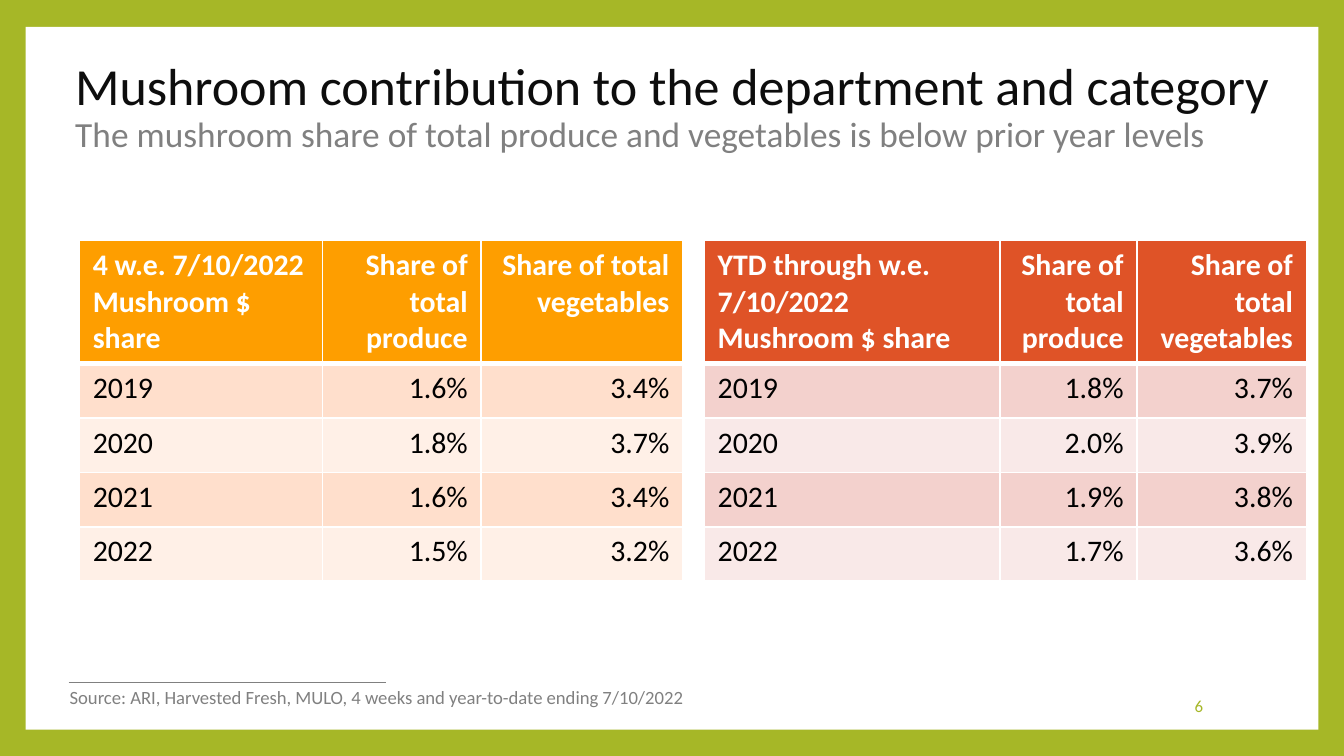
from lxml import etree
from pptx import Presentation
from pptx.dml.color import RGBColor
from pptx.enum.shapes import MSO_CONNECTOR, MSO_SHAPE
from pptx.enum.text import MSO_ANCHOR, MSO_AUTO_SIZE, PP_ALIGN
from pptx.oxml.ns import qn
from pptx.util import Inches, Pt

FONT = "Calibri"
COLORS = {
    "green": "A6B727", "white": "FFFFFF", "black": "000000",
    "title": "0D0D0D", "gray": "808080",
    "orange": "FE9E00", "orange_band": "FFDFCC", "orange_light": "FFF0E7",
    "red": "DF5327", "red_band": "F3D1CD", "red_light": "F9E9E8",
}
SLIDE_WIDTH = 10
SLIDE_HEIGHT = SLIDE_WIDTH * 9 / 16
HEADER_HEIGHT = 0.9
RECENT_WEEKS = [
    ["4 w.e. 7/10/2022\nMushroom $ share", "Share of total produce", "Share of total vegetables"],
    ["2019", "1.6%", "3.4%"],
    ["2020", "1.8%", "3.7%"],
    ["2021", "1.6%", "3.4%"],
    ["2022", "1.5%", "3.2%"],
]
YEAR_TO_DATE = [
    ["YTD through w.e. 7/10/2022\nMushroom $ share", "Share of total produce", "Share of total vegetables"],
    ["2019", "1.8%", "3.7%"],
    ["2020", "2.0%", "3.9%"],
    ["2021", "1.9%", "3.8%"],
    ["2022", "1.7%", "3.6%"],
]


def color(name):
    return RGBColor.from_string(COLORS[name])


def add_run(paragraph, text, size, color_name, bold=False):
    run = paragraph.add_run()
    run.text = text
    run.font.name = FONT
    run.font.size = Pt(size)
    run.font.bold = bold
    run.font.color.rgb = color(color_name)


def add_frame(slide, left, top, width, height):
    """Green slide background with a white panel behind everything else."""
    slide.background.fill.solid()
    slide.background.fill.fore_color.rgb = color("green")
    panel = slide.shapes.add_shape(
        MSO_SHAPE.RECTANGLE, Inches(left), Inches(top), Inches(width), Inches(height))
    panel.shadow.inherit = False
    panel.fill.solid()
    panel.fill.fore_color.rgb = color("white")
    panel.line.fill.background()
    slide.shapes.title._element.addprevious(panel._element)


def set_title(slide, left, top, width, height):
    title = slide.shapes.title
    title.left, title.top = Inches(left), Inches(top)
    title.width, title.height = Inches(width), Inches(height)
    frame = title.text_frame
    frame.auto_size = MSO_AUTO_SIZE.NONE
    frame.vertical_anchor = MSO_ANCHOR.MIDDLE
    paragraph = frame.paragraphs[0]
    paragraph.alignment = PP_ALIGN.LEFT
    paragraph.line_spacing = 0.9
    add_run(paragraph, "Mushroom contribution to the department and category", 27.9, "title")
    paragraph.add_line_break()
    add_run(paragraph,
            "The mushroom share of total produce and vegetables is below prior year levels",
            18.9, "gray")


def set_borders(cell, top, bottom):
    """White borders; the top and bottom widths are in points."""
    properties = cell._tc.get_or_add_tcPr()
    for tag, width in (("a:lnL", 1), ("a:lnR", 1), ("a:lnT", top), ("a:lnB", bottom)):
        line = etree.SubElement(properties, qn(tag), w=str(Pt(width)))
        fill = etree.SubElement(line, qn("a:solidFill"))
        etree.SubElement(fill, qn("a:srgbClr"), val=COLORS["white"])


def add_share_table(slide, left, top, height, column_widths, rows, palette):
    row_height = (height - HEADER_HEIGHT) / (len(rows) - 1)
    table = slide.shapes.add_table(
        len(rows), len(column_widths), Inches(left), Inches(top),
        Inches(sum(column_widths)), Inches(height)).table
    for column, width in zip(table.columns, column_widths):
        column.width = Inches(width)
    for row_index, values in enumerate(rows):
        is_header = row_index == 0
        table.rows[row_index].height = Inches(HEADER_HEIGHT if is_header else row_height)
        if is_header:
            fill_name = palette
        else:
            fill_name = palette + ("_band" if row_index % 2 else "_light")
        for column_index, value in enumerate(values):
            cell = table.cell(row_index, column_index)
            set_borders(cell, 3 if row_index == 1 else 1, 3 if is_header else 1)
            cell.fill.solid()
            cell.fill.fore_color.rgb = color(fill_name)
            paragraph = cell.text_frame.paragraphs[0]
            paragraph.alignment = PP_ALIGN.RIGHT if column_index else PP_ALIGN.LEFT
            for line_index, line in enumerate(value.split("\n")):
                if line_index:
                    paragraph.add_line_break()
                add_run(paragraph, line, 16, "white" if is_header else "black", is_header)


def add_label(slide, left, top, width, height, text, size, color_name, alignment, wrap):
    box = slide.shapes.add_textbox(Inches(left), Inches(top), Inches(width), Inches(height))
    frame = box.text_frame
    frame.word_wrap = wrap
    frame.vertical_anchor = MSO_ANCHOR.MIDDLE
    paragraph = frame.paragraphs[0]
    paragraph.alignment = alignment
    add_run(paragraph, text, size, color_name)


def add_footer(slide, left, top):
    """Source note under a short rule, with the page number at the right."""
    rule_left, rule_top = left + 0.09, top + 0.03
    rule = slide.shapes.add_connector(
        MSO_CONNECTOR.STRAIGHT, Inches(rule_left), Inches(rule_top),
        Inches(rule_left + 2.36), Inches(rule_top))
    rule.line.color.rgb = color("gray")
    rule.line.width = Pt(0.79)
    etree.SubElement(rule._element.spPr, qn("a:effectLst"))
    add_label(slide, left, top, 4.85, 0.27,
              "Source: ARI, Harvested Fresh, MULO, 4 weeks and year-to-date ending 7/10/2022",
              10, "gray", PP_ALIGN.LEFT, False)
    add_label(slide, left + 7.23, top + 0.05, 1.4, 0.3, "6", 9, "green", PP_ALIGN.RIGHT, True)


def main():
    presentation = Presentation()
    presentation.slide_width = Inches(SLIDE_WIDTH)
    presentation.slide_height = Inches(SLIDE_HEIGHT)
    slide = presentation.slides.add_slide(presentation.slide_layouts[5])
    add_frame(slide, 0.19, 0.2, 9.62, 5.23)
    set_title(slide, 0.46, 0.53, 9.58, 0.54)
    add_share_table(slide, 0.59, 1.79, 2.52, [1.81, 1.18, 1.5], RECENT_WEEKS, "orange")
    add_share_table(slide, 5.24, 1.79, 2.52, [2.2, 1.02, 1.26], YEAR_TO_DATE, "red")
    add_footer(slide, 0.42, 5.05)
    presentation.save("out.pptx")


if __name__ == "__main__":
    main()
